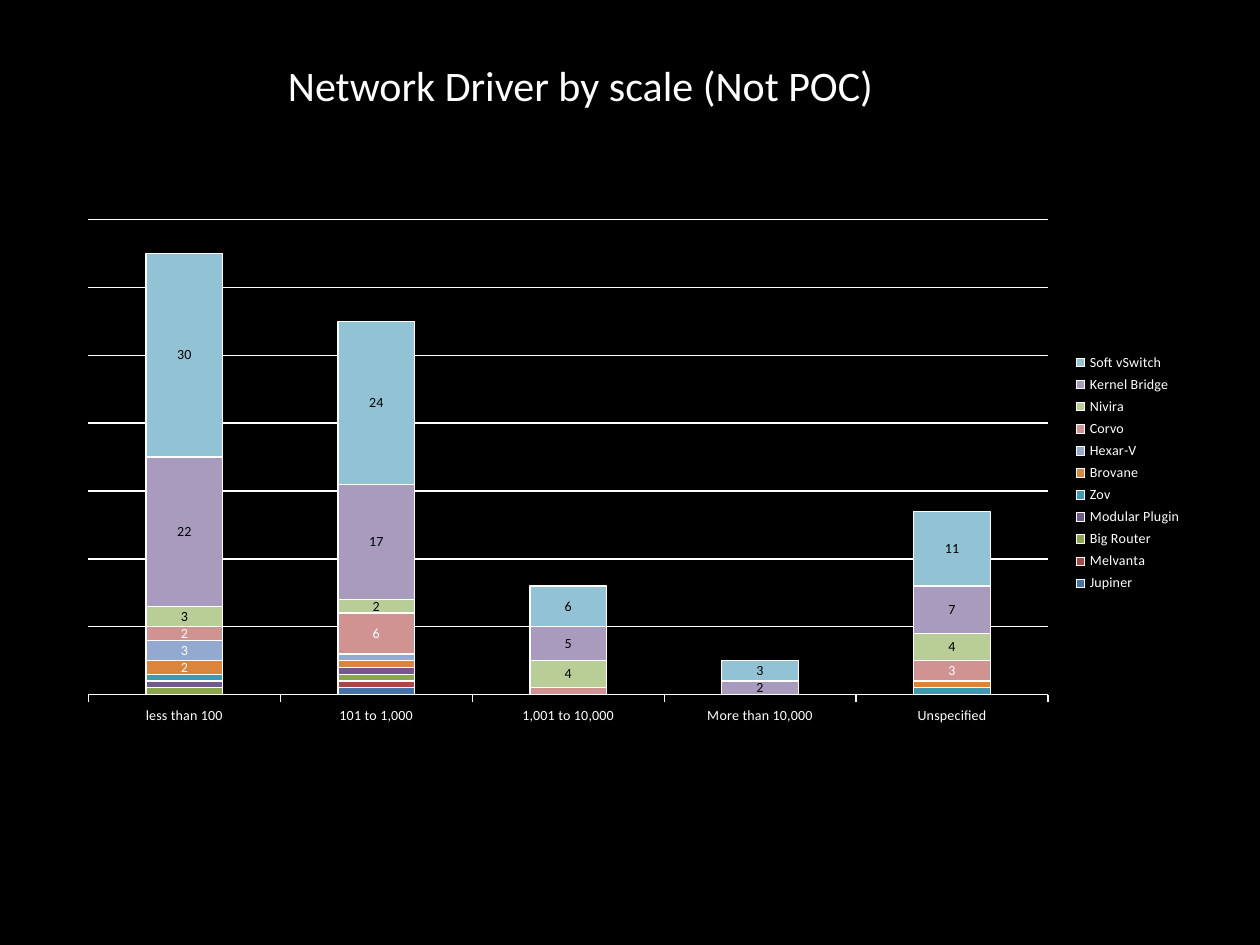
from dataclasses import dataclass

from lxml import etree
from pptx import Presentation
from pptx import util as u
from pptx.chart.data import CategoryChartData
from pptx.dml.color import RGBColor
from pptx.enum import chart as kinds, text
from pptx.oxml import ns

EMU_PER_PX = 914400 / 126


@dataclass(frozen=True)
class Theme:
    """Colours and type of the slide."""
    font: str = "Calibri"
    back: str = "000000"
    light: str = "FFFFFF"
    dark: str = "000000"
    title_size: int = 24
    chart_size: int = 8
    line_width: float = 0.75


THEME = Theme()
SCALES = ["less than 100", "101 to 1,000", "1,001 to 10,000", "More than 10,000", "Unspecified"]
DRIVERS = [
    ("Jupiner", [None, 1, None, None, None], "4572A7", THEME.light),
    ("Melvanta", [None, 1, None, None, None], "AA4643", THEME.light),
    ("Big Router", [1, 1, None, None, None], "89A54E", THEME.light),
    ("Modular Plugin", [1, 1, None, None, None], "71588F", THEME.light),
    ("Zov", [1, None, None, None, 1], "4198AF", THEME.light),
    ("Brovane", [2, 1, None, None, 1], "DB843D", THEME.light),
    ("Hexar-V", [3, 1, None, None, None], "93A9CF", THEME.light),
    ("Corvo", [2, 6, 1, None, 3], "D19392", THEME.light),
    ("Nivira", [3, 2, 4, None, 4], "B9CD96", THEME.dark),
    ("Kernel Bridge", [22, 17, 5, 2, 7], "A99BBD", THEME.dark),
    ("Soft vSwitch", [30, 24, 6, 3, 11], "91C3D5", THEME.dark),
]


def px(length):
    """Turn pixels into EMU."""
    return u.Emu(round(length * EMU_PER_PX))


def style_font(font, size, color):
    """Apply the theme face with a size and colour."""
    font.name = THEME.font
    font.size = u.Pt(size)
    font.color.rgb = RGBColor.from_string(color)


def style_line(line):
    """Draw a line in the thin light style."""
    line.color.rgb = RGBColor.from_string(THEME.light)
    line.width = u.Pt(THEME.line_width)


def add_title(page, left, top, width, height):
    """Place the centred slide title."""
    box = page.shapes.add_textbox(px(left), px(top), px(width), px(height))
    box.text_frame.word_wrap = False
    box.text_frame.auto_size = text.MSO_AUTO_SIZE.SHAPE_TO_FIT_TEXT
    para = box.text_frame.paragraphs[0]
    para.text = "Network Driver by scale (Not POC)"
    para.alignment = text.PP_ALIGN.CENTER
    style_font(para.runs[0].font, THEME.title_size, THEME.light)


def place_plot(chart, left, top, width, height):
    """Fix the inner plot area as fractions of the chart."""
    area = chart.element.find(".//" + ns.qn("c:plotArea"))
    for old in area.findall(ns.qn("c:layout")):
        area.remove(old)
    layout = etree.Element(ns.qn("c:layout"))
    manual = etree.SubElement(layout, ns.qn("c:manualLayout"))
    settings = {"layoutTarget": "inner", "xMode": "edge", "yMode": "edge",
                "x": left, "y": top, "w": width, "h": height}
    for name, value in settings.items():
        etree.SubElement(manual, ns.qn("c:" + name)).set("val", str(value))
    area.insert(0, layout)


def style_axes(chart):
    """Show the categories and the gridlines only."""
    scale = chart.category_axis
    scale.major_tick_mark = kinds.XL_TICK_MARK.OUTSIDE
    scale.minor_tick_mark = kinds.XL_TICK_MARK.NONE
    style_line(scale.format.line)
    count = chart.value_axis
    count.minimum_scale, count.maximum_scale, count.major_unit = 0, 70, 10
    count.has_major_gridlines = True
    style_line(count.major_gridlines.format.line)
    count.visible = False


def style_series(series, color, label_color):
    """Colour one driver and label its values above one."""
    series.format.fill.solid()
    series.format.fill.fore_color.rgb = RGBColor.from_string(color)
    style_line(series.format.line)
    if max(value or 0 for value in series.values) > 1:
        labels = series.data_labels
        labels.show_value = True
        labels.number_format = "[>1]0;;"
        labels.number_format_is_linked = False
        style_font(labels.font, THEME.chart_size, label_color)


def add_driver_chart(page, left, top, width, height):
    """Place the stacked columns of drivers by scale."""
    data = CategoryChartData()
    data.categories = SCALES
    for name, values, _, _ in DRIVERS:
        data.add_series(name, values)
    frame = page.shapes.add_chart(kinds.XL_CHART_TYPE.COLUMN_STACKED,
                                  px(left), px(top), px(width), px(height), data)
    chart = frame.chart
    chart.has_title = False
    style_font(chart.font, THEME.chart_size, THEME.light)
    chart.has_legend = True
    chart.legend.position = kinds.XL_LEGEND_POSITION.RIGHT
    chart.legend.include_in_layout = False
    plot = chart.plots[0]
    plot.gap_width, plot.overlap, plot.vary_by_categories = 150, 100, False
    for series, (_, _, color, label_color) in zip(plot.series, DRIVERS):
        style_series(series, color, label_color)
    style_axes(chart)
    place_plot(chart, 0.02, 0.02, 0.85, 0.9)


def main():
    """Build and save the deck."""
    deck = Presentation()
    deck.slide_width, deck.slide_height = px(1260), px(945)
    page = deck.slides.add_slide(deck.slide_layouts[6])
    page.background.fill.solid()
    page.background.fill.fore_color.rgb = RGBColor.from_string(THEME.back)
    add_title(page, 267, 53, 627, 63)
    add_driver_chart(page, 66, 209, 1129, 528)
    deck.save("out.pptx")


if __name__ == "__main__":
    main()
